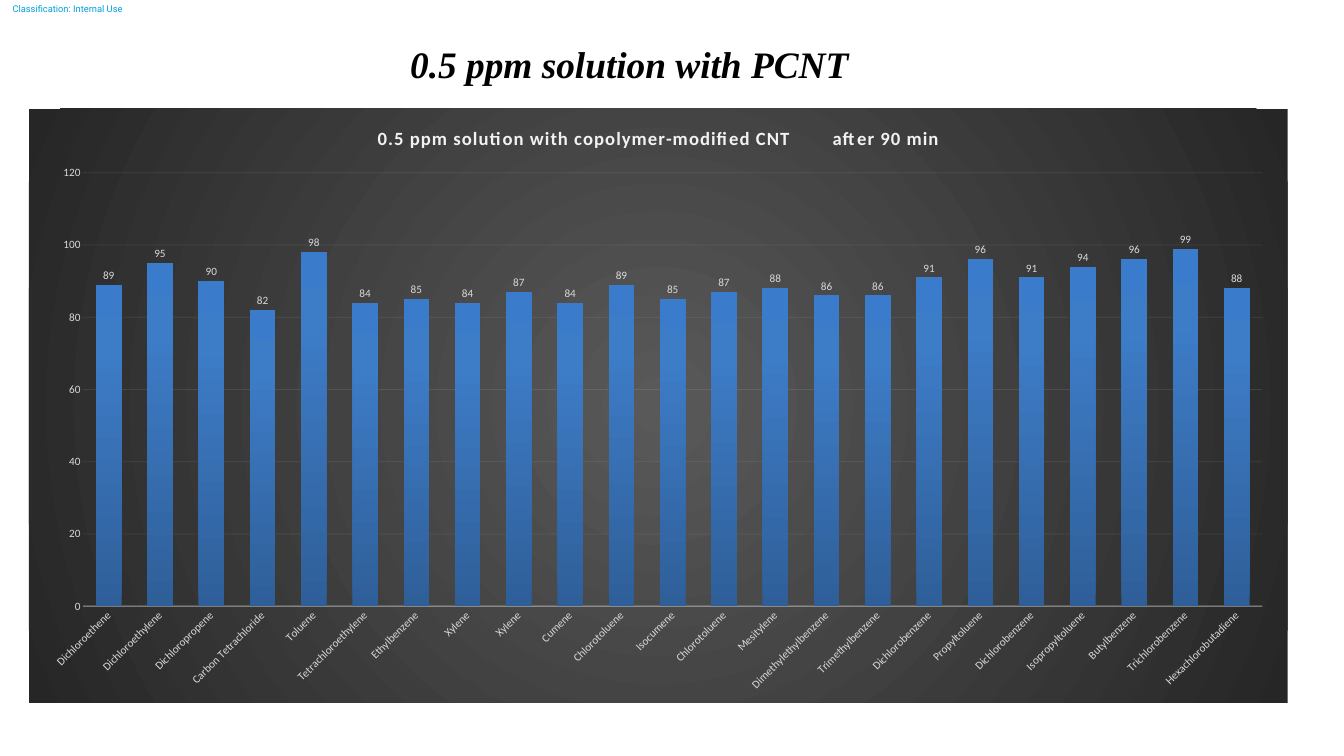
from dataclasses import dataclass

from lxml import etree
from pptx import Presentation
from pptx import util as u
from pptx.chart.data import CategoryChartData
from pptx.dml.color import RGBColor
from pptx.enum import chart as ch, text
from pptx.oxml import parse_xml
from pptx.oxml.ns import nsdecls, qn


@dataclass(frozen=True)
class Theme:
    """Colours, fonts and type sizes of the slide."""
    ink: str = "000000"
    notice: str = "009FDF"
    label: str = "D9D9D9"
    line: str = "F2F2F2"
    bar: tuple = ((0, "2F5F99"), (80, "3D7CC7"), (100, "3A7CCB"))
    backdrop: tuple = ((0, "595959"), (100, "262626"))
    heading_font: str = "Times New Roman"
    notice_font: str = "Roboto"
    chart_font: str = "Calibri"
    heading_size: int = 40
    chart_title_size: int = 20
    label_size: int = 12
    notice_size: int = 10


THEME = Theme()
RECOVERY = [
    ("Dichloroethene", 89), ("Dichloroethylene", 95), ("Dichloropropene", 90),
    ("Carbon Tetrachloride", 82), ("Toluene", 98), ("Tetrachloroethylene", 84),
    ("Ethylbenzene", 85), ("Xylene", 84), ("Xylene", 87), ("Cumene", 84),
    ("Chlorotoluene", 89), ("Isocumene", 85), ("Chlorotoluene", 87),
    ("Mesitylene", 88), ("Dimethylethylbenzene", 86), ("Trimethylbenzene", 86),
    ("Dichlorobenzene", 91), ("Propyltoluene", 96), ("Dichlorobenzene", 91),
    ("Isopropyltoluene", 94), ("Butylbenzene", 96), ("Trichlorobenzene", 99),
    ("Hexachlorobutadiene", 88),
]


def apply(target, **values):
    """Set each given attribute on the target."""
    for name, value in values.items():
        setattr(target, name, value)


def style_font(font, name, size, color, **extra):
    """Give a font its face, size, colour and any further attributes."""
    apply(font, name=name, size=u.Pt(size), **extra)
    font.color.rgb = RGBColor.from_string(color)


def style_line(line, color, width, alpha):
    """Give a line its colour, width in points and opacity in percent."""
    line.color.rgb = RGBColor.from_string(color)
    line.width = u.Pt(width)
    for clr in line.fill._xPr.iter(qn("a:srgbClr")):
        etree.SubElement(clr, qn("a:alpha"), val=str(alpha * 1000))


def gradient(stops, direction):
    """Return a gradient fill element from percent stops and a direction."""
    marks = "".join(f'<a:gs pos="{pos * 1000}"><a:srgbClr val="{color}"/></a:gs>'
                    for pos, color in stops)
    return parse_xml(f'<a:gradFill {nsdecls("a")} rotWithShape="1">'
                     f"<a:gsLst>{marks}</a:gsLst>{direction}</a:gradFill>")


def add_line_of_text(slide, box, words, font, **frame):
    """Place one centred line of text in the box."""
    tf = slide.shapes.add_textbox(*map(u.Inches, box)).text_frame
    apply(tf, word_wrap=True, **frame)
    p = tf.paragraphs[0]
    p.alignment = text.PP_ALIGN.CENTER
    r = p.add_run()
    r.text = words
    style_font(r.font, **font)


def add_notice(slide, box):
    """Place the classification notice."""
    font = dict(name=THEME.notice_font, size=THEME.notice_size, color=THEME.notice)
    margins = dict.fromkeys(
        ("margin_left", "margin_top", "margin_right", "margin_bottom"), 0)
    add_line_of_text(slide, box, "Classification: Internal Use", font,
                     vertical_anchor=text.MSO_ANCHOR.MIDDLE, **margins)


def add_heading(slide, box):
    """Place the slide heading."""
    font = dict(name=THEME.heading_font, size=THEME.heading_size,
                color=THEME.ink, bold=True, italic=True)
    add_line_of_text(slide, box, "0.5 ppm solution with PCNT", font)


def add_chart_title(chart):
    """Write the chart title with a wide gap before the time."""
    chart.has_title = True
    chart.chart_title.include_in_layout = False
    p = chart.chart_title.text_frame.paragraphs[0]
    for words, spacing in (("0.5 ppm solution with copolymer-modified CNT", 100),
                           (" ", 4000), ("after 90 min", 100)):
        r = p.add_run()
        r.text = words
        style_font(r.font, THEME.chart_font, THEME.chart_title_size, THEME.line,
                   bold=True)
        r.font._element.set("spc", str(spacing))


def style_axes(chart):
    """Format both axes and the gridlines."""
    cat, val = chart.category_axis, chart.value_axis
    for axis in (cat, val):
        apply(axis, major_tick_mark=ch.XL_TICK_MARK.NONE,
              minor_tick_mark=ch.XL_TICK_MARK.NONE)
        style_font(axis.tick_labels.font, THEME.chart_font, THEME.label_size,
                   THEME.label)
    body = cat._element.find(qn("c:txPr")).find(qn("a:bodyPr"))
    body.set("rot", str(-45 * 60000))
    style_line(cat.format.line, THEME.line, 1, 54)
    apply(val, minimum_scale=0, maximum_scale=120, major_unit=20,
          has_major_gridlines=True)
    val.format.line.fill.background()
    style_line(val.major_gridlines.format.line, THEME.line, 0.75, 10)


def style_bars(plot):
    """Format the columns and their value labels."""
    apply(plot, gap_width=100, overlap=-24, vary_by_categories=False,
          has_data_labels=True)
    labels = plot.data_labels
    apply(labels, show_value=True, position=ch.XL_LABEL_POSITION.OUTSIDE_END)
    style_font(labels.font, THEME.chart_font, THEME.label_size, THEME.label)
    series = plot.series[0]
    series.invert_if_negative = False
    sp = series.format.fill._xPr
    sp.append(gradient(THEME.bar, '<a:lin ang="16200000" scaled="0"/>'))


def add_backdrop(chart):
    """Fill the chart area with a radial gradient."""
    sp = parse_xml(f'<c:spPr {nsdecls("c", "a")}><a:ln><a:noFill/></a:ln></c:spPr>')
    centre = ('<a:path path="circle"><a:fillToRect l="50000" t="50000" '
              'r="50000" b="50000"/></a:path>')
    sp.insert(0, gradient(THEME.backdrop, centre))
    chart._chartSpace.find(qn("c:chart")).addnext(sp)


def add_recovery_chart(slide, box):
    """Place the column chart of all compounds in the box."""
    names, values = zip(*RECOVERY)
    data = CategoryChartData()
    data.categories = names
    data.add_series("Series 1", values)
    chart = slide.shapes.add_chart(ch.XL_CHART_TYPE.COLUMN_CLUSTERED,
                                   *map(u.Inches, box), data).chart
    chart.has_legend = False
    style_font(chart.font, THEME.chart_font, THEME.notice_size, THEME.ink)
    add_chart_title(chart)
    style_axes(chart)
    style_bars(chart.plots[0])
    add_backdrop(chart)


def main():
    """Build and save the slide."""
    prs = Presentation()
    apply(prs, slide_width=u.Inches(20), slide_height=u.Inches(11.25))
    s = prs.slides.add_slide(prs.slide_layouts[6])
    add_notice(s, (0, 0, 2.01, 0.26))
    add_recovery_chart(s, (0.43, 1.62, 18.73, 8.84))
    add_heading(s, (5.17, 0.56, 8.39, 0.77))
    prs.save("out.pptx")


if __name__ == "__main__":
    main()
